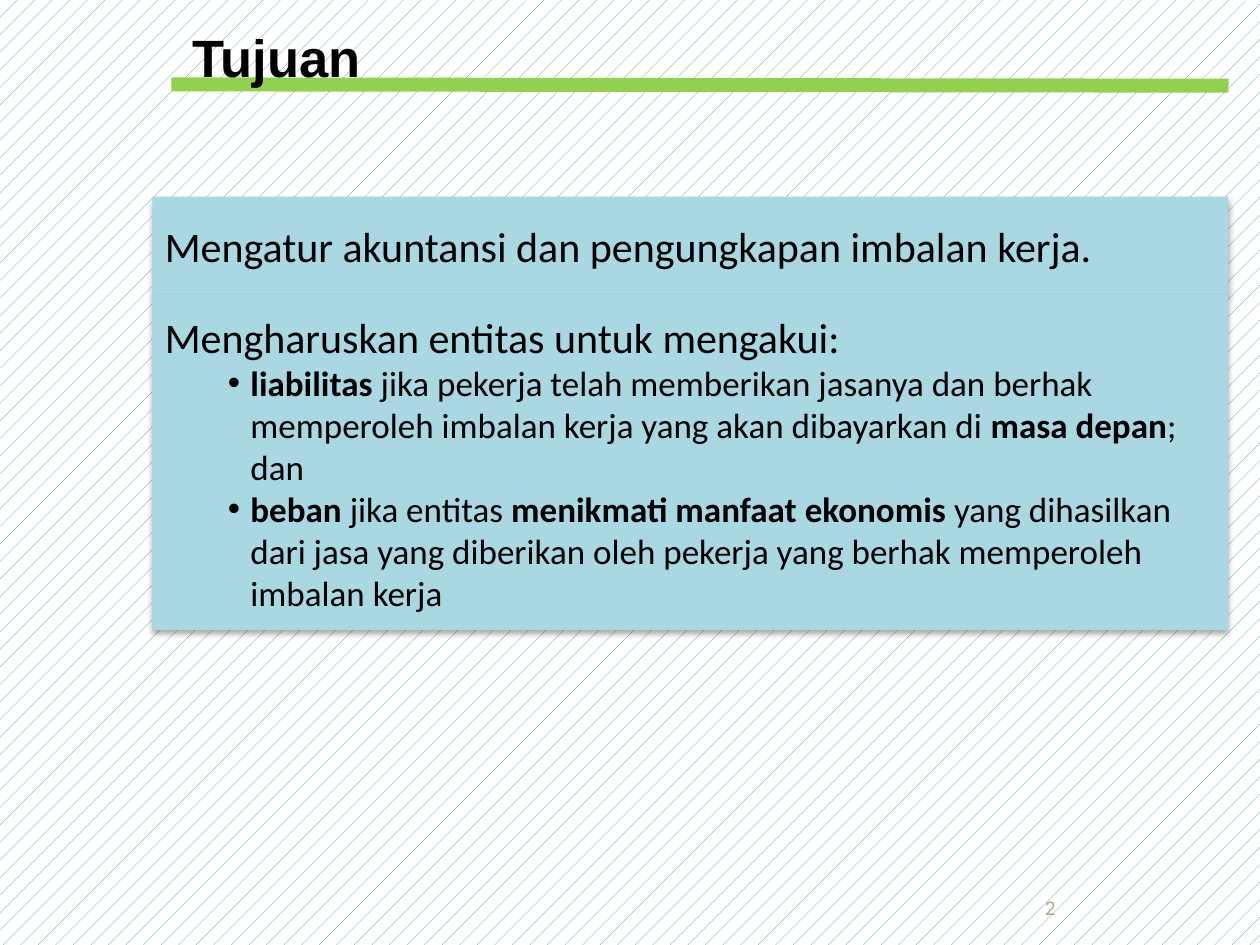
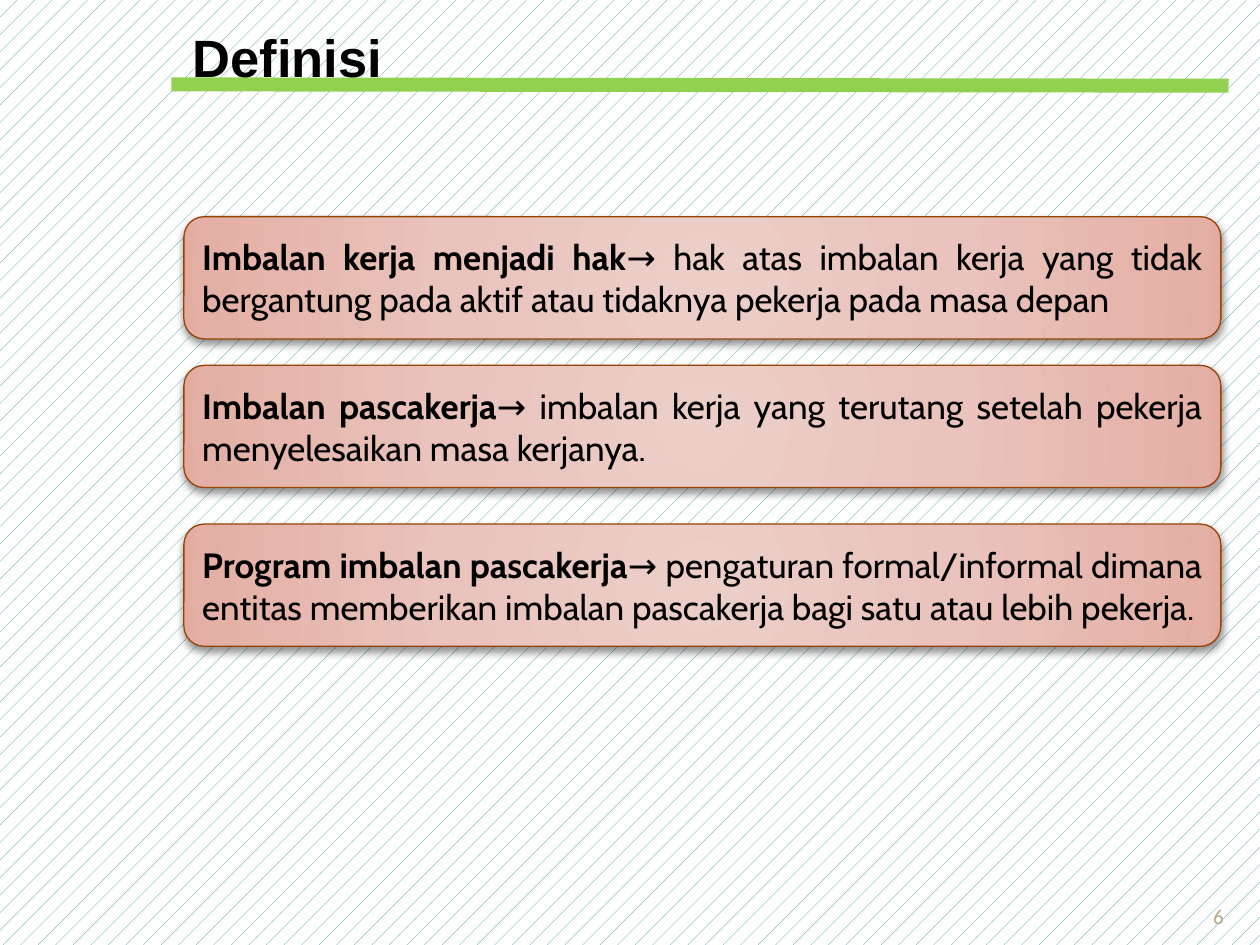
import pptx
import pptx.util
import pptx.dml.color
import pptx.enum.dml
import pptx.enum.shapes
import pptx.enum.text
import pptx.oxml
import pptx.oxml.ns

Inches = pptx.util.Inches
Pt = pptx.util.Pt
Align = pptx.enum.text.PP_ALIGN
Anchor = pptx.enum.text.MSO_ANCHOR
Preset = pptx.enum.shapes.MSO_SHAPE

COLOURS = {
    "hatch": "3891A7",
    "paper": "FFFFFF",
    "text": "000000",
    "number": "B6A98A",
    "rule": "92D050",
    "panel": "A9D7E2",
    "card_line": "964305",
}
CARD_STOPS = [(0, "ECCEC9"), (50, "E9C3BC"), (97, "E4AFA4"), (100, "E4A89B")]
PANEL_SHADOW = (32, 3.5, 2.2)  # opacity in percent, blur and distance in points
CARD_SHADOW = (43, 5, 2)


def colour(name):
    return pptx.dml.color.RGBColor.from_string(COLOURS[name])


def element(markup):
    """Make a drawing element from markup whose first tag lacks its namespace."""
    head, rest = markup.split(">", 1) if "/>" not in markup.split(">", 1)[0] + ">" \
        else (markup[:-2], None)
    space = ' xmlns:a="http://schemas.openxmlformats.org/drawingml/2006/main"'
    return pptx.oxml.parse_xml(head + space + ("/>" if rest is None else ">" + rest))


def write_spans(para, spans, size, font, ink="text"):
    """Fill a paragraph with (text, bold) spans."""
    for text, bold in spans:
        span = para.add_run()
        span.text = text
        span.font.size = Pt(size)
        span.font.name = font
        span.font.bold = bold
        span.font.color.rgb = colour(ink)


def add_text(page, box, anchor):
    frame = page.shapes.add_textbox(*map(Inches, box)).text_frame
    frame.word_wrap = True
    frame.vertical_anchor = anchor
    return frame


def add_block(page, preset, box, shadow):
    """Add a shape with a soft shadow straight below it."""
    block = page.shapes.add_shape(preset, *map(Inches, box))
    block.text_frame.word_wrap = True
    block.text_frame.vertical_anchor = Anchor.MIDDLE
    block.line.fill.background()
    block.shadow.inherit = False
    opacity, blur, distance = shadow
    effects = block._element.spPr.find(pptx.oxml.ns.qn("a:effectLst"))
    effects.append(element(
        f'<a:outerShdw blurRad="{Pt(blur)}" dist="{Pt(distance)}" dir="5400000"'
        f' algn="t" rotWithShape="0"><a:srgbClr val="000000">'
        f'<a:alpha val="{opacity * 1000}"/></a:srgbClr></a:outerShdw>'))
    return block


def fill_radial(shape, stops):
    """Fill a shape with a gradient that spreads from its centre."""
    shape.fill.background()
    properties = shape._element.spPr
    empty = properties.find(pptx.oxml.ns.qn("a:noFill"))
    steps = "".join(f'<a:gs pos="{place * 1000}"><a:srgbClr val="{tone}"/></a:gs>'
                    for place, tone in stops)
    properties.replace(empty, element(
        f'<a:gradFill rotWithShape="1"><a:gsLst>{steps}</a:gsLst><a:path path="circle">'
        '<a:fillToRect l="50000" t="50000" r="50000" b="50000"/></a:path></a:gradFill>'))


def add_bullet(para):
    properties = para._p.get_or_add_pPr()
    properties.set("lvl", "1")
    properties.set("marL", str(Inches(0.68)))
    properties.set("indent", str(Inches(-0.18)))
    properties.append(element('<a:buFont typeface="Arial"/>'))
    properties.append(element('<a:buChar char="•"/>'))


def add_page(deck):
    page = deck.slides.add_slide(deck.slide_layouts[6])
    fill = page.background.fill
    fill.patterned()
    fill.pattern = pptx.enum.dml.MSO_PATTERN.PERCENT_5
    fill.fore_color.rgb = colour("hatch")
    fill.back_color.rgb = colour("paper")
    return page


def add_heading(page, title):
    # Green rule under the title
    rule = page.shapes.add_connector(
        pptx.enum.shapes.MSO_CONNECTOR.STRAIGHT,
        Inches(1.36), Inches(0.67), Inches(9.75), Inches(0.68))
    rule.line.color.rgb = colour("rule")
    rule.line.width = Pt(8)
    rule._element.spPr.append(element("<a:effectLst/>"))

    # Title
    frame = add_text(page, (1.43, 0, 7.67, 0.69), Anchor.TOP)
    frame.auto_size = pptx.enum.text.MSO_AUTO_SIZE.SHAPE_TO_FIT_TEXT
    para = frame.paragraphs[0]
    para.line_spacing = 1.3
    para.space_before = Pt(9)
    before = para._p.pPr.find(pptx.oxml.ns.qn("a:spcBef"))
    before.replace(before[0], element('<a:spcPct val="30000"/>'))
    write_spans(para, [(title, True)], 30, "Arial")


def add_number(page, box, number):
    para = add_text(page, box, Anchor.BOTTOM).paragraphs[0]
    para.alignment = Align.CENTER
    write_spans(para, [(number, False)], 12, "Calibri", "number")


def add_panels(page, box, panels):
    """Stack panels, each (height, lead, bullets), downwards from the top of box."""
    left, top, width = box
    for height, lead, bullets in panels:
        panel = add_block(page, Preset.RECTANGLE, (left, top, width, height), PANEL_SHADOW)
        panel.fill.solid()
        panel.fill.fore_color.rgb = colour("panel")
        frame = panel.text_frame
        frame.paragraphs[0].alignment = Align.LEFT
        write_spans(frame.paragraphs[0], [(lead, False)], 24, "Calibri")
        for spans in bullets:
            para = frame.add_paragraph()
            para.alignment = Align.LEFT
            add_bullet(para)
            write_spans(para, spans, 20, "Calibri")
        top += height


def add_card(page, box, term, meaning):
    card = add_block(page, Preset.ROUNDED_RECTANGLE, box, CARD_SHADOW)
    fill_radial(card, CARD_STOPS)
    card.line.color.rgb = colour("card_line")
    card.line.width = Pt(0.75)
    para = card.text_frame.paragraphs[0]
    para.alignment = Align.JUSTIFY
    write_spans(para, [(term, True), ("→ " + meaning, False)], 20, "Cabin")


def build_purpose(deck):
    page = add_page(deck)
    add_number(page, (7.17, 6.83, 2.33, 0.52), "2")
    liability = [
        ("liabilitas ", True),
        ("jika pekerja telah memberikan jasanya dan berhak memperoleh imbalan kerja "
         "yang akan dibayarkan di ", False),
        ("masa depan", True),
        ("; dan", False),
    ]
    expense = [
        ("beban ", True),
        ("jika entitas ", False),
        ("menikmati manfaat ekonomis ", True),
        ("yang dihasilkan dari jasa yang diberikan oleh pekerja yang berhak "
         "memperoleh imbalan kerja", False),
    ]
    add_panels(page, (1.21, 1.56, 8.54), [
        (0.78, "Mengatur akuntansi dan pengungkapan imbalan kerja.", []),
        (2.66, "Mengharuskan entitas untuk mengakui:", [liability, expense]),
    ])
    add_heading(page, "Tujuan")


def build_definitions(deck):
    page = add_page(deck)
    definitions = [
        (1.72, "Imbalan kerja menjadi hak",
         "hak atas imbalan kerja yang tidak bergantung pada aktif atau tidaknya "
         "pekerja pada masa depan"),
        (2.9, "Imbalan pascakerja",
         "imbalan kerja yang terutang setelah pekerja menyelesaikan masa kerjanya."),
        (4.16, "Program imbalan pascakerja",
         "pengaturan formal/informal dimana entitas memberikan imbalan pascakerja "
         "bagi satu atau lebih pekerja."),
    ]
    for top, term, meaning in definitions:
        add_card(page, (1.46, top, 8.23, 0.97), term, meaning)
    add_heading(page, "Definisi")
    add_number(page, (9.42, 6.9, 0.5, 0.52), "6")


def main():
    deck = pptx.Presentation()
    deck.slide_width, deck.slide_height = Inches(10), Inches(7.5)
    build_purpose(deck)
    build_definitions(deck)
    deck.save("out.pptx")


if __name__ == "__main__":
    main()
